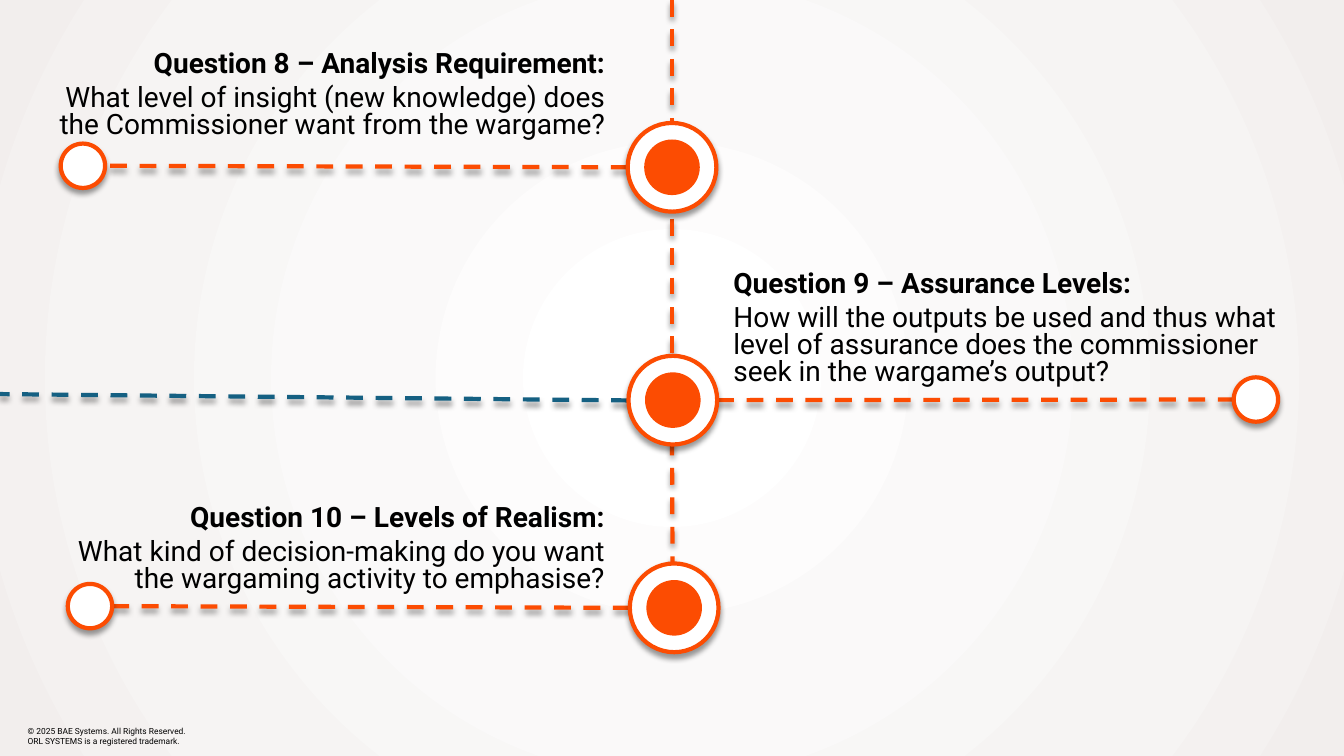
"""Build a timeline slide with three wargame design questions."""
from dataclasses import dataclass

from lxml import etree
from pptx import Presentation, util as u
from pptx.dml.color import RGBColor
from pptx.enum import dml, shapes, text
from pptx.oxml import parse_xml
from pptx.oxml.ns import nsdecls, qn

WIDTH, HEIGHT = u.Inches(13.33), u.Inches(7.5)


@dataclass(frozen=True)
class Theme:
    orange: str = "FC4C02"
    blue: str = "156082"
    white: str = "FFFFFF"
    black: str = "000000"
    backdrop: tuple = ((8, "FFFFFF"), (42, "FAF9F9"), (72, "F6F4F3"), (100, "F2EEED"))
    font: str = "Roboto"
    body: int = 20
    small: int = 6
    stroke: int = 3


@dataclass(frozen=True)
class Spot:
    x: float
    y: float


@dataclass(frozen=True)
class Area:
    left: float
    top: float
    width: float
    height: float


@dataclass(frozen=True)
class Question:
    heading: str
    prompt: str
    node: Spot
    tip: Spot
    area: Area
    align: text.PP_ALIGN


THEME = Theme()
RING, DISC, TIP = 11.73, 6.8, 5.87
LEFT, RIGHT = text.PP_ALIGN.LEFT, text.PP_ALIGN.RIGHT
QUESTIONS = (
    Question("Question 8 – Analysis Requirement:",
             "What level of insight (new knowledge) does the Commissioner want from the wargame?",
             Spot(50, 22.13), Spot(6.17, 21.93), Area(2.88, 6.2, 42.9, 13.2), RIGHT),
    Question("Question 9 – Assurance Levels:",
             "How will the outputs be used and thus what level of assurance "
             "does the commissioner seek in the wargame’s output?",
             Spot(50.06, 52.93), Spot(93.45, 52.85), Area(53.83, 35.33, 42, 16.8), LEFT),
    Question("Question 10 – Levels of Realism:",
             "What kind of decision-making do you want the wargaming activity to emphasise?",
             Spot(50.16, 80.4), Spot(6.7, 80.18), Area(1.65, 66.27, 44.1, 13.2), RIGHT),
)
SPINE = ((Spot(50, 0), Spot(50, 21.2)),
         (Spot(50, 28.93), Spot(50, 54.67)),
         (Spot(50, 58), Spot(50.06, 82.67)))
FOOTER = ("© 2025 BAE Systems. All Rights Reserved.", "ORL SYSTEMS is a registered trademark.")
FOOTER_AREA = Area(2.06, 95.2, 13.43, 4.27)


def across(share: float) -> int:
    """Turn a percentage of the slide width into a length."""
    return round(WIDTH * share / 100)


def down(share: float) -> int:
    """Turn a percentage of the slide height into a length."""
    return round(HEIGHT * share / 100)


def apply(target, values: dict) -> None:
    """Set each named attribute of the target."""
    for name, value in values.items():
        setattr(target, name, value)


def finish(item, color: str, shadow: bool = True) -> None:
    """Give a shape or connector its outline and drop shadow."""
    item.line.color.rgb = RGBColor.from_string(color)
    item.line.width = u.Pt(THEME.stroke)
    effects = etree.SubElement(item._element.spPr, qn("a:effectLst"))
    if shadow:
        effects.append(parse_xml(
            f'<a:outerShdw {nsdecls("a")} blurRad="{u.Pt(4)}" dist="{u.Pt(3)}" dir="5400000"'
            f' algn="t" rotWithShape="0"><a:srgbClr val="{THEME.black}">'
            '<a:alpha val="40000"/></a:srgbClr></a:outerShdw>'))


def add_dash(page, start: Spot, end: Spot, color: str = THEME.orange) -> None:
    """Draw a dashed line between two spots."""
    line = page.shapes.add_connector(shapes.MSO_CONNECTOR.STRAIGHT, across(start.x),
                                     down(start.y), across(end.x), down(end.y))
    line.line.dash_style = dml.MSO_LINE.DASH
    finish(line, color)


def add_circle(holder, center: Spot, diameter: float, fill: str, shadow: bool = True) -> None:
    """Draw a circle around its centre."""
    size = down(diameter)
    circle = holder.add_shape(shapes.MSO_SHAPE.OVAL, across(center.x) - size // 2,
                              down(center.y) - size // 2, size, size)
    circle.fill.solid()
    circle.fill.fore_color.rgb = RGBColor.from_string(fill)
    finish(circle, THEME.orange, shadow)


def add_text(page, area: Area, lines: tuple, size: int, frame: dict,
             layout: dict, bold_first: bool = False) -> None:
    """Write one paragraph per line into a text box."""
    box = page.shapes.add_textbox(across(area.left), down(area.top),
                                  across(area.width), down(area.height))
    apply(box.text_frame, {"word_wrap": True, **frame})
    for index, line in enumerate(lines):
        para = box.text_frame.paragraphs[0] if index == 0 else box.text_frame.add_paragraph()
        apply(para, layout)
        span = para.add_run()
        span.text = line
        apply(span.font, {"name": THEME.font, "size": u.Pt(size),
                          "bold": bold_first and index == 0})
        span.font.color.rgb = RGBColor.from_string(THEME.black)


def paint_background(page) -> None:
    """Fill the page with a circular gradient."""
    page.background.fill.gradient()
    gradient = page.element.find(f".//{qn('a:gradFill')}")
    stops = "".join(f'<a:gs pos="{place * 1000}"><a:srgbClr val="{color}"/></a:gs>'
                    for place, color in THEME.backdrop)
    gradient.getparent().replace(gradient, parse_xml(
        f'<a:gradFill {nsdecls("a")} rotWithShape="1"><a:gsLst>{stops}</a:gsLst>'
        '<a:path path="circle"><a:fillToRect l="50000" t="50000" r="50000" b="50000"/>'
        '</a:path></a:gradFill>'))


def add_question(page, question: Question) -> None:
    """Draw a question with its node, branch and tip."""
    node, tip = question.node, question.tip
    side = 1 if tip.x > node.x else -1
    to_width = HEIGHT / WIDTH / 2 * side
    add_dash(page, Spot(node.x + RING * to_width, node.y), Spot(tip.x - TIP * to_width, tip.y))
    add_circle(page.shapes, tip, TIP, THEME.white)
    group = page.shapes.add_group_shape()
    add_circle(group.shapes, node, RING, THEME.white)
    add_circle(group.shapes, node, DISC, THEME.orange, shadow=False)
    add_text(page, question.area, (question.heading, question.prompt), THEME.body,
             {"auto_size": text.MSO_AUTO_SIZE.SHAPE_TO_FIT_TEXT},
             {"alignment": question.align, "line_spacing": 0.8, "space_after": u.Pt(5)},
             bold_first=True)


def main() -> None:
    """Build and save the deck."""
    deck = Presentation()
    apply(deck, {"slide_width": WIDTH, "slide_height": HEIGHT})
    page = deck.slides.add_slide(deck.slide_layouts[6])
    paint_background(page)
    add_text(page, FOOTER_AREA, FOOTER, THEME.small,
             {"vertical_anchor": text.MSO_ANCHOR.MIDDLE, "margin_left": 0, "margin_top": 0,
              "margin_right": 0, "margin_bottom": 0}, {"alignment": LEFT})
    for start, end in SPINE:
        add_dash(page, start, end)
    add_dash(page, Spot(46.73, 52.97), Spot(0, 52.13), THEME.blue)
    for question in QUESTIONS:
        add_question(page, question)
    deck.save("out.pptx")


if __name__ == "__main__":
    main()
